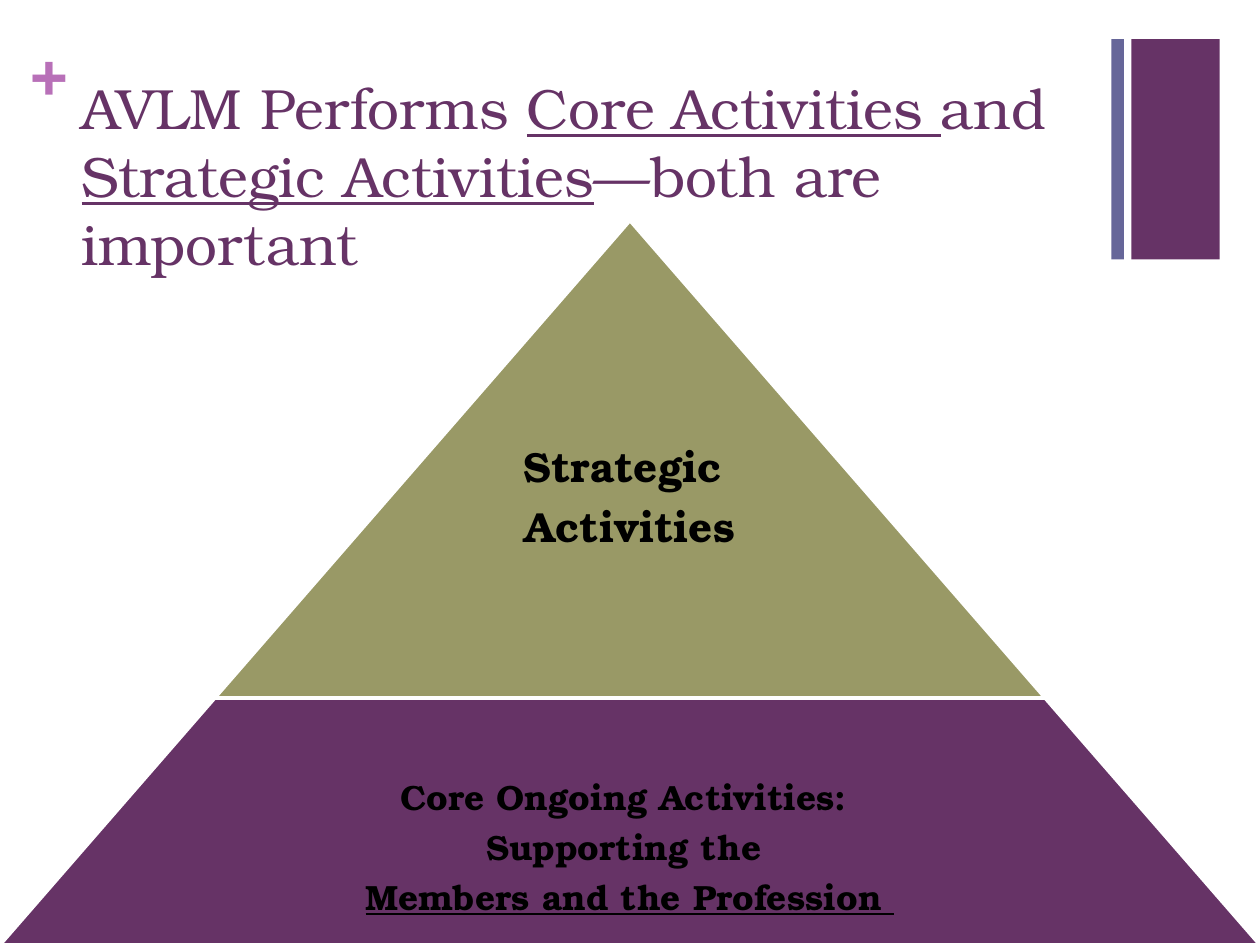
import pptx
import pptx.util
import pptx.dml.color
import pptx.enum.shapes
import pptx.enum.text

Inches = pptx.util.Inches
RGBColor = pptx.dml.color.RGBColor
SHAPES = pptx.enum.shapes.MSO_SHAPE
ALIGN = pptx.enum.text.PP_ALIGN

PURPLE = RGBColor(0x66, 0x33, 0x66)
SLATE = RGBColor(0x66, 0x66, 0x99)
ORCHID = RGBColor(0xB8, 0x70, 0xB8)
OLIVE = RGBColor(0x99, 0x99, 0x66)
WHITE = RGBColor(0xFF, 0xFF, 0xFF)
BLACK = RGBColor(0, 0, 0)
FONT = "TeX Gyre Bonum"


def add_block(page, kind, box, fill, outline=None):
    """Add a flat shape, with a 2 pt outline if a colour is given."""
    shape = page.shapes.add_shape(kind, *map(Inches, box))
    shape.shadow.inherit = False
    shape.fill.solid()
    shape.fill.fore_color.rgb = fill
    if outline is None:
        shape.line.fill.background()
    else:
        shape.line.color.rgb = outline
        shape.line.width = pptx.util.Pt(2)
    return shape


def add_text(page, box, paras, size, color, bold=False, align=ALIGN.LEFT,
             insets=(0, 0, 0, 0), line_spacing=None, space_after=0):
    """Add a text box; each paragraph is a list of (text, underlined) spans."""
    frame = page.shapes.add_textbox(*map(Inches, box)).text_frame
    frame.word_wrap = True
    (frame.margin_left, frame.margin_top,
     frame.margin_right, frame.margin_bottom) = map(Inches, insets)
    for index, spans in enumerate(paras):
        para = frame.add_paragraph() if index else frame.paragraphs[0]
        para.alignment = align
        para.space_after = pptx.util.Pt(space_after)
        if line_spacing:
            para.line_spacing = line_spacing
        for text, underlined in spans:
            span = para.add_run()
            span.text = text
            span.font.name = FONT
            span.font.size = pptx.util.Pt(size)
            span.font.bold = bold
            span.font.underline = underlined
            span.font.color.rgb = color


def add_corner_bars(page, left, top, height):
    """Draw the thin and the wide bar side by side."""
    add_block(page, SHAPES.RECTANGLE, (left, top, 0.1, height), SLATE)
    add_block(page, SHAPES.RECTANGLE, (left + 0.16, top, 0.7, height), PURPLE)


def add_heading(page, left, top, width, height):
    """Write the plus sign and the title beside it."""
    add_text(page, (left, top, 0.29, 0.61), [[("+", False)]], 36, ORCHID, bold=True)
    title = [("AVLM Performs ", False), ("Core Activities ", True), ("and ", False),
             ("Strategic Activities", True), ("—both are important", False)]
    add_text(page, (left + 0.31, top + 0.28, width - 0.31, height - 0.28), [title],
             32.4, PURPLE, insets=(0.1, 0.05, 0.1, 0.05))


def add_tier(page, box, fill, paras, size, text_inset, text_drop):
    """Draw one pyramid tier with its centred label."""
    left, top, width, height = box
    tier = add_block(page, SHAPES.TRAPEZOID, box, fill, WHITE)
    tier.adjustments[0] = 0.87
    label_box = (left + text_inset, top + text_drop,
                 width - 2 * text_inset, height - text_drop)
    add_text(page, label_box, paras, size, BLACK, bold=True, align=ALIGN.CENTER,
             line_spacing=0.9, space_after=0.35 * size)


def add_pyramid(page, left, top, width, height):
    """Stack the strategic tier on the core tier."""
    upper = 3.79
    lower = height - upper
    side = width * lower / height / 2
    add_tier(page, (left + side, top, width - 2 * side, upper), OLIVE,
             [[("Strategic ", False)], [("Activities", False)]], 24, 0, 1.79)
    add_tier(page, (left, top + upper, width, lower), PURPLE,
             [[("Core Ongoing Activities: ", False)], [("Supporting the ", False)],
              [("Members and the Profession ", True)]], 20, 1.75, 0.65)


def main():
    """Build the slide and save it."""
    deck = pptx.Presentation()
    deck.slide_width, deck.slide_height = Inches(10), Inches(7.5)
    page = deck.slides.add_slide(deck.slide_layouts[6])
    add_corner_bars(page, 8.82, 0.31, 1.75)
    add_heading(page, 0.24, 0.25, 8.57, 1.5)
    add_pyramid(page, 0, 1.75, 10, 5.75)
    deck.save("out.pptx")


if __name__ == "__main__":
    main()
